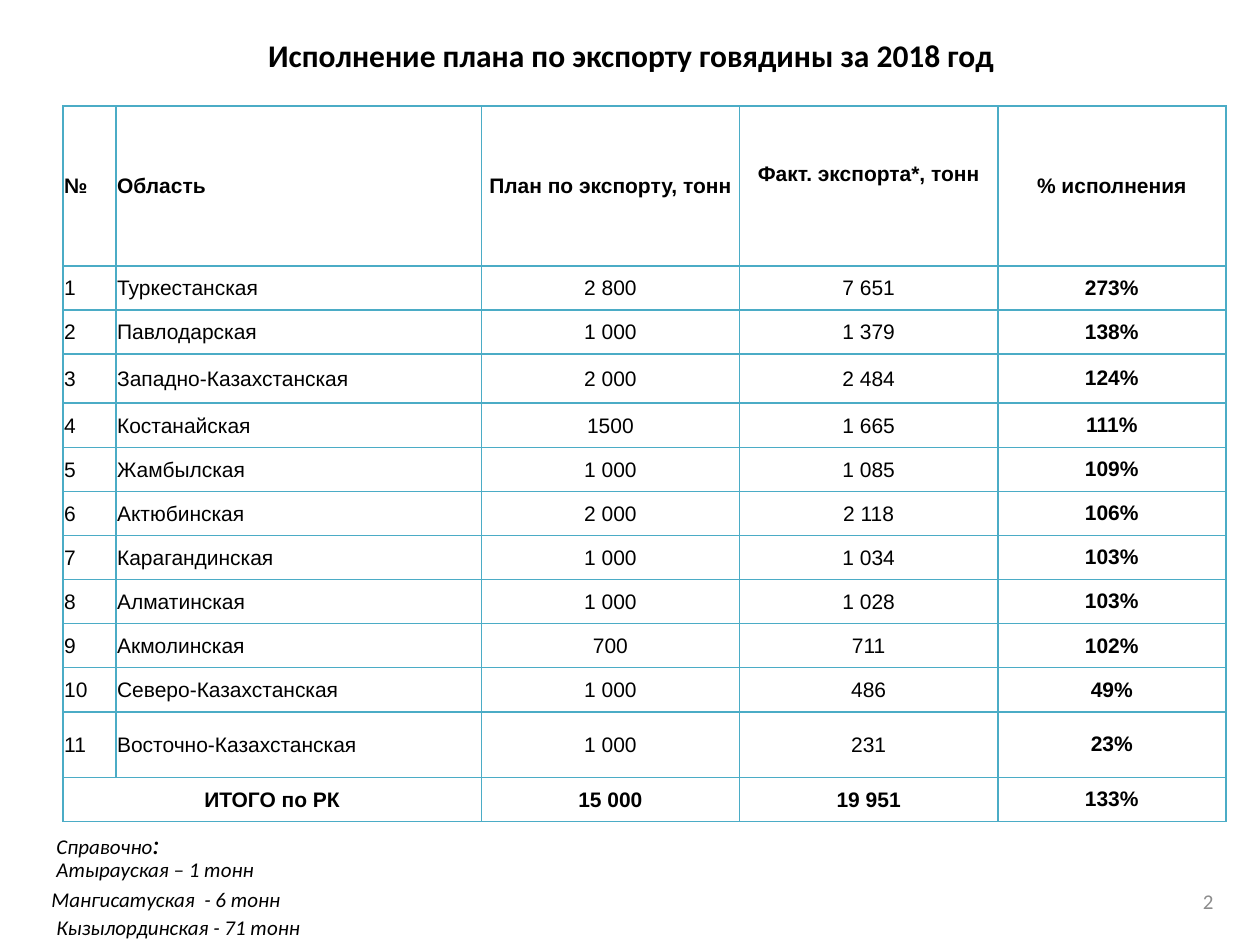
from lxml import etree
from pptx import Presentation
from pptx import util as u
from pptx.dml.color import RGBColor
from pptx.enum import text
from pptx.oxml import ns

WIDTH, HEIGHT = 10, 7.5
COLORS = {"ink": "000000", "border": "4BACC6", "row": "FFFFFF", "number": "8C8C8C"}
COLUMNS = [0.42, 2.9, 2.05, 2.05, 1.81]
ROW_HEIGHT = 0.35
SPECIAL_HEIGHTS = {0: 1.27, 3: 0.39, 11: 0.52}
HEADER = ["№", "Область", "План по экспорту, тонн", "Факт. экспорта*, тонн", "% исполнения"]
REGIONS = [
    ["Туркестанская", "2 800", "7 651", "273%"],
    ["Павлодарская", "1 000", "1 379", "138%"],
    ["Западно-Казахстанская", "2 000", "2 484", "124%"],
    ["Костанайская", "1500", "1 665", "111%"],
    ["Жамбылская", "1 000", "1 085", "109%"],
    ["Актюбинская", "2 000", "2 118", "106%"],
    ["Карагандинская", "1 000", "1 034", "103%"],
    ["Алматинская", "1 000", "1 028", "103%"],
    ["Акмолинская", "700", "711", "102%"],
    ["Северо-Казахстанская", "1 000", "486", "49%"],
    ["Восточно-Казахстанская", "1 000", "231", "23%"],
]
TOTAL = ["ИТОГО по РК", "", "15 000", "19 951", "133%"]
NOTES = [
    (0.35, 6.51, 0.37, [("Справочно", 12), (":", 16)]),
    (0.35, 6.75, 0.3, [("Атырауская – 1 тонн", 12)]),
    (0.31, 6.99, 0.3, [("Мангисатуская  - 6 тонн", 12)]),
    (0.35, 7.21, 0.3, [("Кызылординская - 71 тонн", 12)]),
]


def set_font(font, size, name="Calibri", color="ink", bold=False, italic=False):
    """Apply size, typeface, colour and style to a font."""
    font.size, font.name = u.Pt(size), name
    font.bold, font.italic = bold, italic
    font.color.rgb = RGBColor.from_string(COLORS[color])


def add_text(slide, box, runs, align, anchor, **style):
    """Add a one-paragraph text box made of (wording, size) runs."""
    shape = slide.shapes.add_textbox(*map(u.Inches, box))
    frame = shape.text_frame
    frame.word_wrap = True
    frame.vertical_anchor = anchor
    paragraph = frame.paragraphs[0]
    paragraph.alignment = align
    set_font(paragraph.font, runs[0][1], **style)
    for wording, size in runs:
        run = paragraph.add_run()
        run.text = wording
        set_font(run.font, size, **style)


def add_borders(cell):
    """Draw a thin line on all four sides of a cell."""
    properties = cell._tc.get_or_add_tcPr()
    for side in ("a:lnL", "a:lnR", "a:lnT", "a:lnB"):
        line = etree.SubElement(properties, ns.qn(side), w=str(u.Pt(1)))
        fill = etree.SubElement(line, ns.qn("a:solidFill"))
        etree.SubElement(fill, ns.qn("a:srgbClr"), val=COLORS["border"])


def fill_cell(cell, wording, centered, bold, filled, margin):
    """Write and style one table cell."""
    add_borders(cell)
    if filled:
        cell.fill.solid()
        cell.fill.fore_color.rgb = RGBColor.from_string(COLORS["row"])
    else:
        cell.fill.background()
    cell.margin_left = cell.margin_right = cell.margin_top = u.Inches(margin)
    cell.margin_bottom = 0
    cell.vertical_anchor = text.MSO_ANCHOR.MIDDLE
    cell.text = wording
    paragraph = cell.text_frame.paragraphs[0]
    paragraph.alignment = text.PP_ALIGN.CENTER if centered else text.PP_ALIGN.LEFT
    set_font(paragraph.font, 12, "Arial", bold=bold)


def add_export_table(slide):
    """Build the table of planned and actual exports by region."""
    rows = [HEADER, *([str(i), *region] for i, region in enumerate(REGIONS, 1)), TOTAL]
    heights = [SPECIAL_HEIGHTS.get(i, ROW_HEIGHT) for i in range(len(rows))]
    box = (0.5, 0.84, sum(COLUMNS), sum(heights))
    table = slide.shapes.add_table(len(rows), len(COLUMNS), *map(u.Inches, box)).table
    table.first_row = table.horz_banding = False
    for column, width in zip(table.columns, COLUMNS):
        column.width = u.Inches(width)
    last_row, last_column = len(rows) - 1, len(COLUMNS) - 1
    for i, (row, height) in enumerate(zip(rows, heights)):
        table.rows[i].height = u.Inches(height)
        body = 0 < i < last_row
        for j, wording in enumerate(row):
            margin = 0 if i and j == last_column else 0.01
            fill_cell(table.cell(i, j), wording, j > 1 or i == last_row,
                      not body or j == last_column, body, margin)
    table.cell(0, 3).margin_bottom = u.Inches(0.19)
    table.cell(last_row, 0).merge(table.cell(last_row, 1))


def main():
    """Build and save the beef export slide."""
    presentation = Presentation()
    presentation.slide_width, presentation.slide_height = u.Inches(WIDTH), u.Inches(HEIGHT)
    slide = presentation.slides.add_slide(presentation.slide_layouts[6])
    add_text(slide, (0.51, 0.21, 0.9 * WIDTH, 0.46),
             [("Исполнение плана по экспорту говядины за 2018 год", 18)],
             text.PP_ALIGN.CENTER, text.MSO_ANCHOR.MIDDLE, bold=True)
    add_export_table(slide)
    add_text(slide, (7.4, 6.95, 2.33, 0.4), [("2", 12)],
             text.PP_ALIGN.RIGHT, text.MSO_ANCHOR.MIDDLE, color="number")
    for left, top, height, runs in NOTES:
        add_text(slide, (left, top, WIDTH, height), runs,
                 text.PP_ALIGN.LEFT, text.MSO_ANCHOR.TOP, italic=True)
    presentation.save("out.pptx")


if __name__ == "__main__":
    main()
